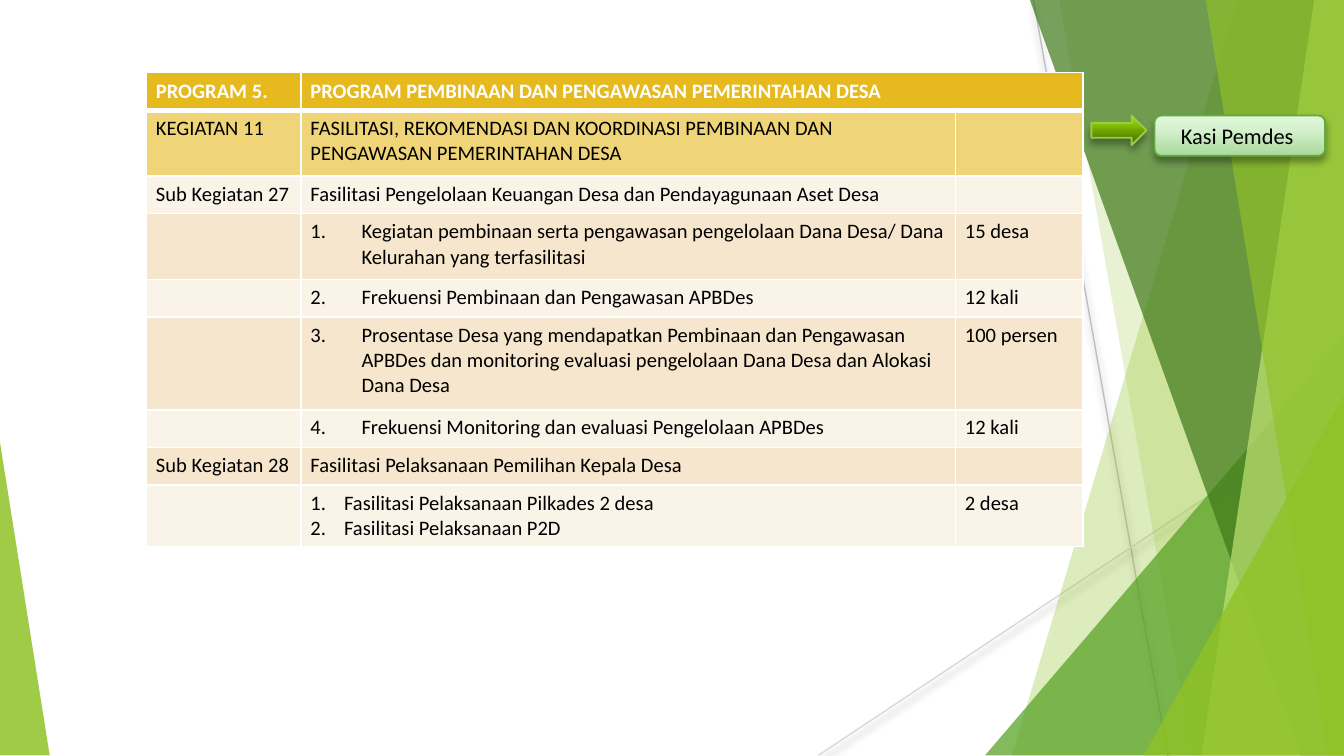
from lxml import etree
from pptx import Presentation
from pptx.dml.color import RGBColor
from pptx.enum import shapes, text
from pptx.oxml import ns
from pptx.util import Inches, Pt

COLORS = {
    "white": "FFFFFF", "black": "000000", "green": "90C226", "mid": "54A021",
    "dark": "3F7819", "lime": "C0E474", "grey": "BFBFBF", "pale grey": "D9D9D9",
    "header": "E6B91E", "activity": "F0D578", "light": "FAF3E8", "sand": "F5E6CD",
    "box line": "61AC40", "arrow line": "98CD3F",
}
rgb = {name: RGBColor.from_string(value) for name, value in COLORS.items()}


def child(parent, tag, **attributes):
    element = etree.SubElement(parent, ns.qn(tag))
    for name, value in attributes.items():
        element.set(name, str(value))
    return element


def write(frame, content, size=11, color="black", bold=False, align=None,
          indent=0, start=None):
    """Fill a text frame, one paragraph a line, numbered from start if given."""
    for index, line in enumerate(content.split("\n")):
        para = frame.paragraphs[0] if index == 0 else frame.add_paragraph()
        para.alignment = align
        if start:
            props = para._p.get_or_add_pPr()
            props.set("marL", str(Inches(indent)))
            props.set("indent", str(-Inches(indent)))
            child(props, "a:buFont", typeface="+mj-lt")
            child(props, "a:buAutoNum", type="arabicPeriod", startAt=start)
        if not line:
            child(para._p, "a:endParaRPr", sz=size * 100)
            continue
        span = para.add_run()
        span.text = line
        span.font.name, span.font.size, span.font.bold = "Calibri", Pt(size), bold
        span.font.color.rgb = rgb[color]


# Widescreen page, 16 to 9
deck = Presentation()
deck.slide_width = Inches(10)
deck.slide_height = Inches(10) * 9 // 16
page = deck.slides.add_slide(deck.slide_layouts[6])
shadowed = []

# Thin lines behind the facets
for x1, y1, x2, y2, color in [(7.69, 0, 8.69, 5.63, "grey"),
                              (10, 3.02, 6.09, 5.62, "pale grey")]:
    line = page.shapes.add_connector(shapes.MSO_CONNECTOR.STRAIGHT, Inches(x1),
                                     Inches(y1), Inches(x2), Inches(y2))
    line.line.color.rgb = rgb[color]
    line.line.width = Pt(0.75)
    shadowed.append((line, child(line._element.spPr, "a:effectLst")))

# Translucent facets: top and bottom x of a slanted band running to the right
# edge, or the box and tip position of a triangle
facets = [
    ((9.21, 7.53), "green", 30),
    ((7.88, 8.87), "green", 20),
    ((7.33, 2.5, 2.67, 3.12, 1), "mid", 72),
    ((7.66, 9.68), "dark", 70),
    ((9.78, 8.94), "lime", 70),
    ((8.97, 9.88), "green", 65),
    ((8.51, 2.94, 1.49, 2.68, 1), "green", 80),
    ((0, 3.29, 0.37, 2.33, 0), "green", 85),
]
for form, color, opacity in facets:
    if len(form) == 2:
        top, bottom = form
        builder = page.shapes.build_freeform(Inches(top), Inches(-0.01))
        builder.add_line_segments([(Inches(x), Inches(y)) for x, y in
                                   [(10, -0.01), (10, 5.62), (bottom, 5.62)]])
        facet = builder.convert_to_shape()
    else:
        *place, tip = form
        facet = page.shapes.add_shape(shapes.MSO_SHAPE.ISOSCELES_TRIANGLE,
                                      *map(Inches, place))
        facet.adjustments[0] = tip
    facet.shadow.inherit = False
    facet.line.fill.background()
    facet.fill.solid()
    facet.fill.fore_color.rgb = rgb[color]
    tint = facet._element.spPr.find(ns.qn("a:solidFill"))[0]
    child(tint, "a:alpha", val=opacity * 1000)

# Programme table: fill, height, first cell, second cell, third cell, numbering
rows = [
    ("header", 0.28, "PROGRAM 5.",
     "PROGRAM PEMBINAAN DAN PENGAWASAN PEMERINTAHAN DESA", "", {}),
    ("activity", 0.49, "KEGIATAN 11",
     "FASILITASI, REKOMENDASI DAN KOORDINASI PEMBINAAN DAN PENGAWASAN "
     "PEMERINTAHAN DESA", "", {}),
    ("light", 0.28, "Sub Kegiatan 27",
     "Fasilitasi Pengelolaan Keuangan Desa dan Pendayagunaan Aset Desa", "", {}),
    ("sand", 0.49, "",
     "Kegiatan pembinaan serta pengawasan pengelolaan Dana Desa/ Dana Kelurahan "
     "yang terfasilitasi", "15 desa", {"indent": 0.38, "start": 1}),
    ("light", 0.28, "", "Frekuensi Pembinaan dan Pengawasan APBDes", "12 kali",
     {"indent": 0.38, "start": 2}),
    ("sand", 0.69, "",
     "Prosentase Desa yang mendapatkan Pembinaan dan Pengawasan APBDes dan "
     "monitoring evaluasi pengelolaan Dana Desa dan Alokasi Dana Desa",
     "100 persen", {"indent": 0.38, "start": 3}),
    ("light", 0.28, "", "Frekuensi Monitoring dan evaluasi Pengelolaan APBDes",
     "12 kali", {"indent": 0.38, "start": 4}),
    ("sand", 0.28, "Sub Kegiatan 28",
     "Fasilitasi Pelaksanaan Pemilihan Kepala Desa", "", {}),
    ("light", 0.45, "",
     "Fasilitasi Pelaksanaan Pilkades 2 desa\nFasilitasi Pelaksanaan P2D",
     "2 desa", {"indent": 0.25, "start": 1}),
]
table = page.shapes.add_table(len(rows), 3, Inches(1.09), Inches(0.54),
                              Inches(6.97), Inches(3.52)).table
for column, width in zip(table.columns, [1.15, 4.87, 0.95]):
    column.width = Inches(width)
table.cell(0, 1).merge(table.cell(0, 2))

for r, (fill, height, *contents, numbering) in enumerate(rows):
    table.rows[r].height = Inches(height)
    for c, content in enumerate(contents):
        cell = table.cell(r, c)
        cell.margin_left = cell.margin_right = Inches(0.07)
        cell.margin_top = cell.margin_bottom = Inches(0.04)
        for side in ("L", "R", "T", "B"):
            heavy = (r == 0 and side == "B") or (r == 1 and side == "T")
            border = child(cell._tc.get_or_add_tcPr(), f"a:ln{side}",
                           w=Pt(3 if heavy else 1))
            child(child(border, "a:solidFill"), "a:srgbClr", val=COLORS["white"])
        cell.fill.solid()
        cell.fill.fore_color.rgb = rgb[fill]
        style = {"color": "white", "bold": True} if r == 0 else {}
        if r == 0:
            cell.vertical_anchor = text.MSO_ANCHOR.MIDDLE
        write(cell.text_frame, content, **style, **(numbering if c == 1 else {}))

# Responsible section and the arrow that leads to it
glossy = [
    (shapes.MSO_SHAPE.ROUNDED_RECTANGLE, (8.59, 0.86, 1.27, 0.3), "box line",
     [(0, "A9D99B"), (65, "D5F1CD"), (100, "E0F7DA")], "Kasi Pemdes "),
    (shapes.MSO_SHAPE.RIGHT_ARROW, (8.12, 0.86, 0.41, 0.22), "arrow line",
     [(0, "456600"), (50, "6FA400"), (70, "84C307"), (100, "A0E727")], ""),
]
for kind, place, outline, stops, label in glossy:
    box = page.shapes.add_shape(kind, *map(Inches, place))
    box.fill.gradient()
    box.fill.gradient_angle = 90
    stop_list = box._element.spPr.find(ns.qn("a:gradFill")).find(ns.qn("a:gsLst"))
    for stop in list(stop_list):
        stop_list.remove(stop)
    for position, value in stops:
        child(child(stop_list, "a:gs", pos=position * 1000), "a:srgbClr", val=value)
    box.line.color.rgb = rgb[outline]
    box.line.width = Pt(1)
    box.shadow.inherit = False
    shadowed.append((box, box._element.spPr.find(ns.qn("a:effectLst"))))
    if label:
        frame = box.text_frame
        frame.word_wrap = True
        frame.vertical_anchor = text.MSO_ANCHOR.MIDDLE
        frame.margin_left = frame.margin_right = Inches(0.07)
        frame.margin_top = frame.margin_bottom = Inches(0.04)
        write(frame, label, size=12, align=text.PP_ALIGN.CENTER)

# Soft shadow straight below the lines, box and arrow
for shape, effects in shadowed:
    shadow = child(effects, "a:outerShdw", blurRad=Pt(4), dist=Pt(3),
                   dir=90 * 60000, rotWithShape=0)
    child(child(shadow, "a:srgbClr", val=COLORS["black"]), "a:alpha", val=35000)

deck.save("out.pptx")
